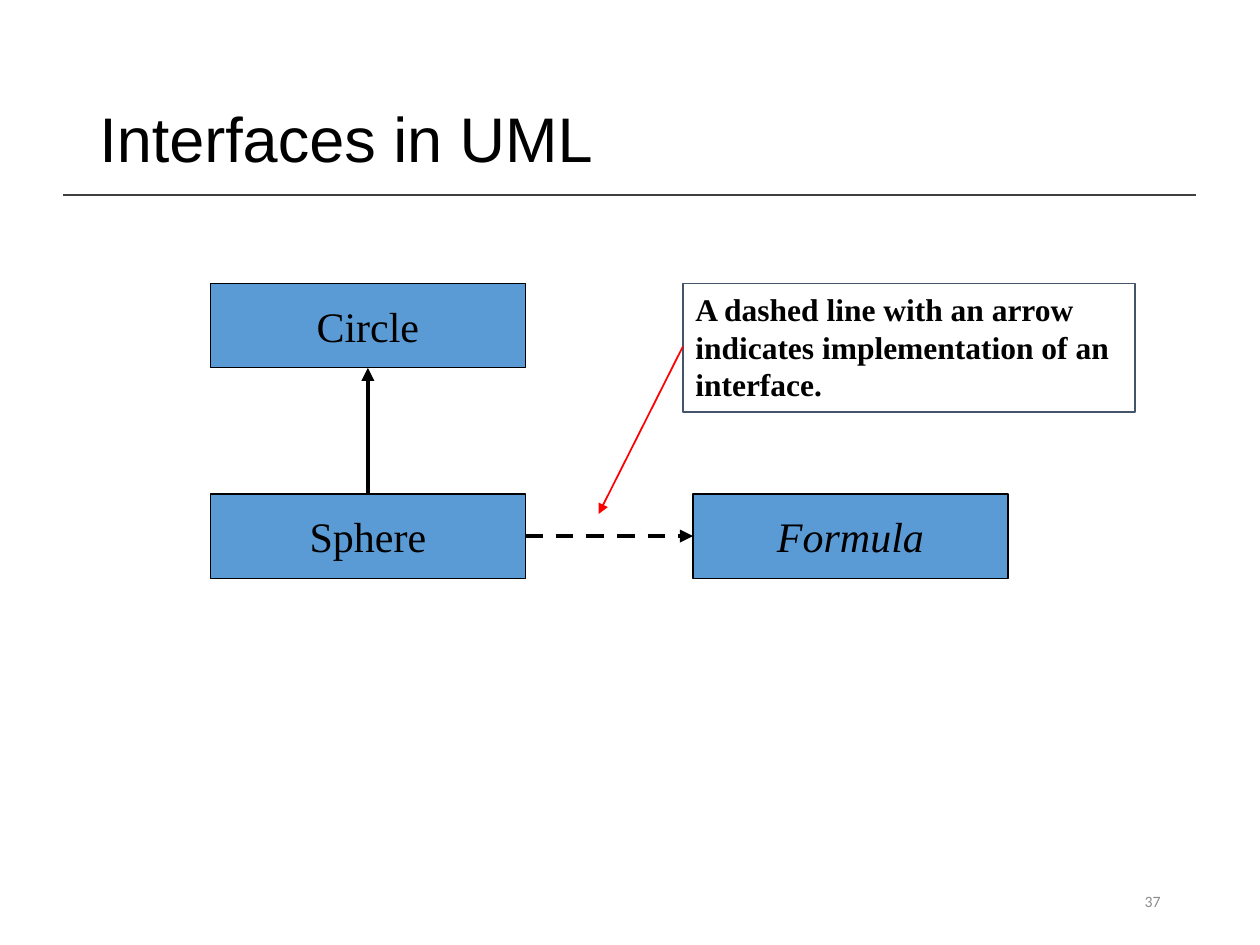
from lxml.etree import SubElement
from pptx import Presentation
from pptx.dml.color import RGBColor
from pptx.enum.dml import MSO_LINE as Dash
from pptx.enum.shapes import MSO_CONNECTOR as Connector, MSO_SHAPE as Shape
from pptx.enum.text import MSO_ANCHOR as Anchor, PP_ALIGN as Align
from pptx.oxml.ns import qn
from pptx.util import Inches, Pt

SERIF = "Times New Roman"
BOX_WIDTH, BOX_HEIGHT = 2.5, 0.67
LEFT_COLUMN, RIGHT_COLUMN = 1.67, 5.5
TOP_ROW, BOTTOM_ROW = 2.25, 3.92


def color(hex_text):
    return RGBColor.from_string(hex_text)


def write(shape, text, font=SERIF, size=24, ink="000000", bold=False,
          italic=False, align=Align.LEFT, anchor=Anchor.MIDDLE, wrap=True,
          spacing=None):
    frame = shape.text_frame
    frame.word_wrap = wrap
    frame.vertical_anchor = anchor
    para = frame.paragraphs[0]
    para.alignment = align
    if spacing:
        para.line_spacing = spacing
    span = para.add_run()
    span.text = text
    span.font.name = font
    span.font.size = Pt(size)
    span.font.bold = bold
    span.font.italic = italic
    span.font.color.rgb = color(ink)


def add_text(page, box, text, **style):
    write(page.shapes.add_textbox(*map(Inches, box)), text, **style)


def add_box(page, box, text, fill=None, outline="000000", weight=0.75, **style):
    shape = page.shapes.add_shape(Shape.RECTANGLE, *map(Inches, box))
    shape.shadow.inherit = False
    if fill:
        shape.fill.solid()
        shape.fill.fore_color.rgb = color(fill)
    else:
        shape.fill.background()
    shape.line.color.rgb = color(outline)
    shape.line.width = Pt(weight)
    write(shape, text, **style)


def add_line(page, start, end, ink="000000", weight=1, dash=None, arrow=True):
    line = page.shapes.add_connector(Connector.STRAIGHT,
                                     *map(Inches, (*start, *end)))
    line.line.color.rgb = color(ink)
    line.line.width = Pt(weight)
    if dash:
        line.line.dash_style = dash
    if arrow:
        SubElement(line.line._get_or_add_ln(), qn("a:tailEnd"), type="triangle")
    SubElement(line._element.spPr, qn("a:effectLst"))


def add_heading(page, box):
    add_line(page, (0.5, 1.55), (9.49, 1.55), ink="404040", arrow=False)
    add_text(page, box, "Interfaces in UML", font="Arial", size=36, spacing=0.9)


def add_diagram(page):
    # Classes and the interface
    for name, left, top, italic in (
            ("Circle", LEFT_COLUMN, TOP_ROW, False),
            ("Formula", RIGHT_COLUMN, BOTTOM_ROW, True),
            ("Sphere", LEFT_COLUMN, BOTTOM_ROW, False)):
        add_box(page, (left, top, BOX_WIDTH, BOX_HEIGHT), name, fill="5B9BD5",
                italic=italic, align=Align.CENTER, wrap=False)

    # Inheritance, then implementation
    center = LEFT_COLUMN + BOX_WIDTH / 2
    middle = BOTTOM_ROW + BOX_HEIGHT / 2
    add_line(page, (center, BOTTOM_ROW), (center, TOP_ROW + BOX_HEIGHT),
             weight=2.5)
    add_line(page, (LEFT_COLUMN + BOX_WIDTH, middle), (RIGHT_COLUMN, middle),
             weight=2.5, dash=Dash.DASH)


def add_note(page, box):
    add_box(page, box, "A dashed line with an arrow indicates implementation "
            "of an interface.", outline="44546A", weight=1, size=18, bold=True,
            anchor=Anchor.TOP)
    left, top = box[:2]
    add_line(page, (left, top + 0.5), (4.75, 4.08), ink="FF0000")


def add_page_number(page, box):
    add_text(page, box, "37", font="Calibri", size=9, ink="8C8C8C",
             align=Align.RIGHT)


def main():
    deck = Presentation()
    deck.slide_width, deck.slide_height = Inches(10), Inches(7.5)
    page = deck.slides.add_slide(deck.slide_layouts[6])
    add_heading(page, (0.69, 0.4, 8.62, 1.45))
    add_diagram(page)
    add_note(page, (5.42, TOP_ROW, 3.59, 1.02))
    add_page_number(page, (7.06, 6.95, 2.25, 0.4))
    deck.save("out.pptx")


if __name__ == "__main__":
    main()
